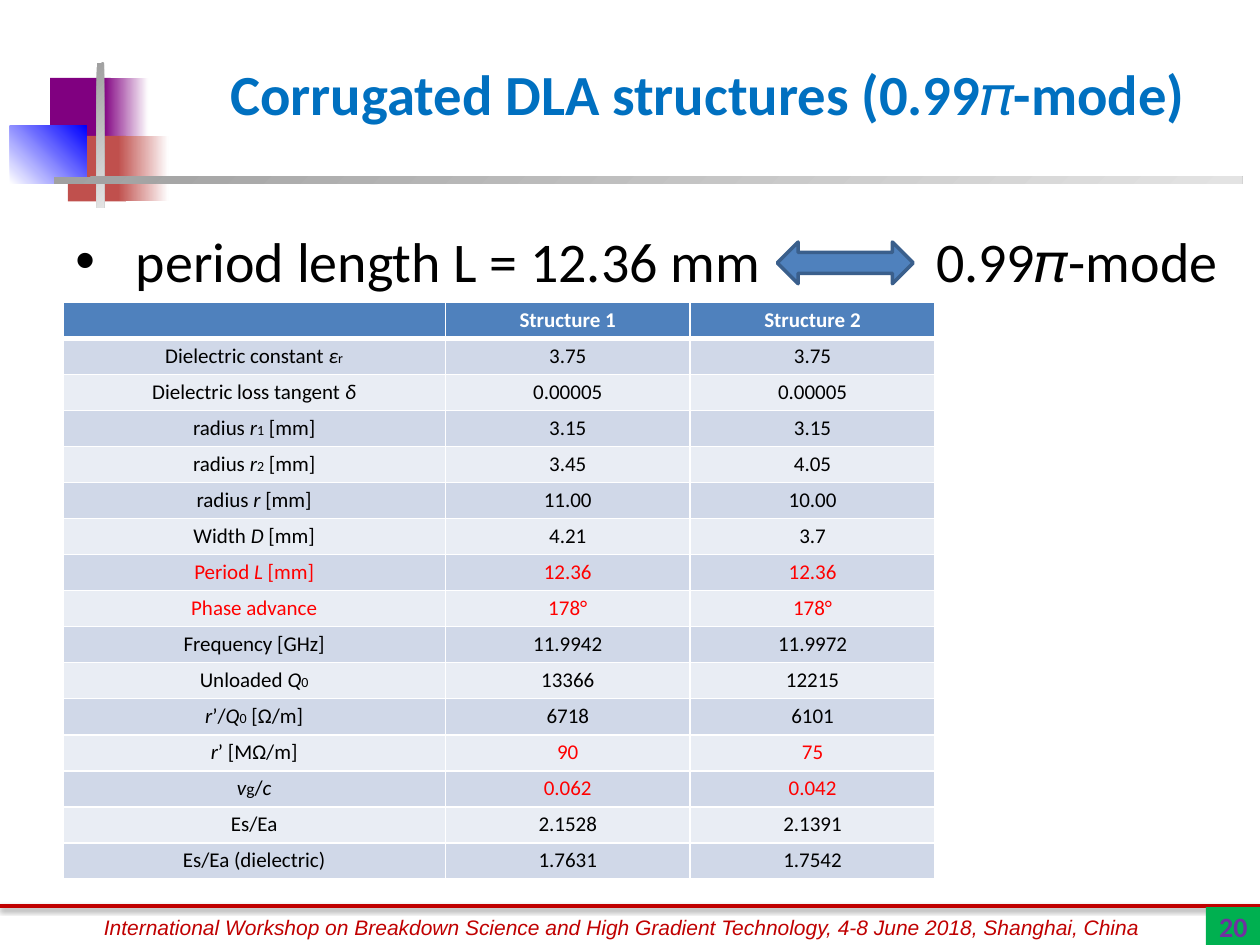
from lxml import etree
from pptx import Presentation
from pptx.dml.color import RGBColor
from pptx.enum.shapes import MSO_CONNECTOR, MSO_SHAPE
from pptx.enum.text import MSO_ANCHOR, PP_ALIGN
from pptx.oxml.ns import qn
from pptx.util import Cm, Pt

RECT, ARROW = MSO_SHAPE.RECTANGLE, MSO_SHAPE.LEFT_RIGHT_ARROW
LINE = MSO_CONNECTOR.STRAIGHT
LEFT, MID, RIGHT = PP_ALIGN.LEFT, PP_ALIGN.CENTER, PP_ALIGN.RIGHT
TOP, CENTER = MSO_ANCHOR.TOP, MSO_ANCHOR.MIDDLE

WHITE = RGBColor(0xFF, 0xFF, 0xFF)
BLACK = RGBColor(0, 0, 0)
PURPLE = RGBColor(0x80, 0, 0x80)
BRICK = RGBColor(0xC0, 0x50, 0x4D)
BLUE = RGBColor(0, 0, 0xFF)
GREY = RGBColor(0xA0, 0xA0, 0xA0)
PALE = RGBColor(0xE3, 0xE3, 0xE3)
CRIMSON = RGBColor(0xC0, 0, 0)
SKY = RGBColor(0, 0x70, 0xC0)
STEEL = RGBColor(0x4F, 0x81, 0xBD)
NAVY = RGBColor(0x3A, 0x5F, 0x8C)
GREEN = RGBColor(0, 0xB0, 0x50)
VIOLET = RGBColor(0x70, 0x30, 0xA0)
RED = RGBColor(0xFF, 0, 0)
BANDS = RGBColor(0xD0, 0xD8, 0xE8), RGBColor(0xE9, 0xED, 0xF4)

STYLES = {"~": (12, True), "_": (8, False), "^": (10, False)}
ROWS = [
    ("Dielectric constant |~ε|_r", "3.75", "3.75"),
    ("Dielectric loss tangent |~δ", "0.00005", "0.00005"),
    ("radius |~r|_1| [mm]", "3.15", "3.15"),
    ("radius |~r|_2| [mm]", "3.45", "4.05"),
    ("radius |~r| [mm]", "11.00", "10.00"),
    ("Width |~D |[mm]", "4.21", "3.7"),
    ("Period |~L| [mm]", "12.36", "12.36"),
    ("Phase advance", "178°", "178°"),
    ("Frequency [GHz]", "11.9942", "11.9972"),
    ("Unloaded |~Q|_0", "13366", "12215"),
    ("~r|’/|~Q|_0| [Ω/m]", "6718", "6101"),
    ("~r|’ [MΩ/m]", "90", "75"),
    ("~v|^g|/|~c", "0.062", "0.042"),
    ("Es/Ea", "2.1528", "2.1391"),
    ("Es/Ea (dielectric)", "1.7631", "1.7542"),
]
RED_ROWS = "Period |~L| [mm]", "Phase advance"
RED_DATA = RED_ROWS + ("~r|’ [MΩ/m]", "~v|^g|/|~c")


def style(run, size, color, bold=False, italic=False, face="Calibri"):
    font = run.font
    font.name, font.size, font.bold, font.italic = face, Pt(size), bold, italic
    font.color.rgb = color


def write(frame, text, size, color, align=LEFT, anchor=TOP, **looks):
    frame.word_wrap = True
    frame.vertical_anchor = anchor
    frame.text = text
    para = frame.paragraphs[0]
    para.alignment = align
    style(para.runs[0], size, color, **looks)


def add_text(slide, box, *args, **looks):
    frame = slide.shapes.add_textbox(*map(Cm, box)).text_frame
    write(frame, *args, **looks)
    return frame


def add_block(slide, box, color, end=None, angle=0, kind=RECT):
    shape = slide.shapes.add_shape(kind, *map(Cm, box))
    shape.shadow.inherit = False
    shape.line.fill.background()
    if end is None:
        shape.fill.solid()
        shape.fill.fore_color.rgb = color
    else:
        shape.fill.gradient()
        shape.fill.gradient_angle = angle
        for stop, tone in zip(shape.fill.gradient_stops, (color, end)):
            stop.color.rgb = tone
    return shape


def add_motif(slide, left, top):
    parts = [
        (0.81, 0.3, 1.22, 1.32, PURPLE),
        (1.88, 0.3, 0.91, 1.32, PURPLE, WHITE),
        (1.17, 1.47, 1.17, 1.32, BRICK),
        (2.18, 1.47, 1.02, 1.32, BRICK, WHITE),
        (0, 1.27, 1.55, 1.17, WHITE, BLUE, 45),
        (1.75, 0, 0.15, 2.92, GREY, PALE, 315),
        (0.89, 2.29, 23.95, 0.15, GREY, PALE, 315),
    ]
    for x, y, wide, high, *fill in parts:
        add_block(slide, (left + x, top + y, wide, high), *fill)


def add_footer(slide, left, top, width):
    rule = slide.shapes.add_connector(LINE, Cm(left), Cm(top), Cm(left + width), Cm(top))
    rule.line.color.rgb = CRIMSON
    rule.line.width = Pt(2)
    effects = etree.SubElement(rule._element.spPr, qn("a:effectLst"))
    shade = etree.SubElement(effects, qn("a:outerShdw"), blurRad=str(Pt(3.1)),
                             dist=str(Pt(1.6)), dir="5400000", rotWithShape="0")
    tone = etree.SubElement(shade, qn("a:srgbClr"), val="000000")
    etree.SubElement(tone, qn("a:alpha"), val="38000")
    add_text(slide, (left + 1.37, top + 0.05, 22.35, 0.76),
             "International Workshop on Breakdown Science and High Gradient Technology, "
             "4-8 June 2018, Shanghai, China",
             12, CRIMSON, MID, italic=True, face="Arial")
    badge = add_block(slide, (left + width - 1.09, top + 0.03, 1.09, 0.76), GREEN)
    write(badge.text_frame, "20", 16, VIOLET, RIGHT, CENTER, bold=True)
    badge.text_frame.word_wrap = False


def add_period(slide, left, top, height):
    frame = add_text(slide, (left, top, 14.4, height), "period length L = 12.36 mm", 32, BLACK)
    frame.margin_right = 0
    props = frame.paragraphs[0]._p.get_or_add_pPr()
    props.set("marL", str(Cm(1.22)))
    props.set("indent", str(-Cm(1.22)))
    etree.SubElement(props, qn("a:buFont"), typeface="Arial")
    etree.SubElement(props, qn("a:buChar"), char="•")
    arrow = add_block(slide, (left + 14.4, top + 0.43, 2.74, 0.84), STEEL, kind=ARROW)
    arrow.line.color.rgb = NAVY
    arrow.line.width = Pt(2)
    add_text(slide, (left + 17.35, top, 6.4, height), "0.99𝜋-mode", 32, BLACK)


def set_edges(cell, base):
    props = cell._tc.get_or_add_tcPr()
    for spot, side in enumerate("LRTB"):
        width = base if side == "B" else 1
        edge = etree.Element(qn(f"a:ln{side}"), w=str(Pt(width)))
        fill = etree.SubElement(edge, qn("a:solidFill"))
        etree.SubElement(fill, qn("a:srgbClr"), val=str(WHITE))
        props.insert(spot, edge)


def fill_cell(cell, text, color, fill, bold=False, base=1):
    cell.fill.solid()
    cell.fill.fore_color.rgb = fill
    cell.vertical_anchor = CENTER
    cell.margin_left = cell.margin_right = Cm(0.1)
    cell.margin_top = cell.margin_bottom = Cm(0.1)
    set_edges(cell, base)
    para = cell.text_frame.paragraphs[0]
    para.alignment = MID
    if not text:
        etree.SubElement(para._p, qn("a:endParaRPr"), sz="1200")
        return
    for part in text.split("|"):
        size, italic = STYLES.get(part[0], (12, False))
        run = para.add_run()
        run.text = part[1:] if part[0] in STYLES else part
        style(run, size, color, bold, italic)


def add_data(slide, left, top, width, height):
    count = len(ROWS) + 1
    frame = slide.shapes.add_table(count, 3, Cm(left), Cm(top), Cm(width), Cm(height))
    table = frame.table
    for col, wide in zip(table.columns, (3.03, 1.94, 1.94)):
        col.width = Cm(width * wide / 6.91)
    for row in table.rows:
        row.height = Cm(height / count)
    for col, text in enumerate(("", "Structure 1", "Structure 2")):
        fill_cell(table.cell(0, col), text, WHITE, STEEL, True, 3)
    for row, texts in enumerate(ROWS):
        for col, text in enumerate(texts):
            marked = RED_DATA if col else RED_ROWS
            color = RED if texts[0] in marked else BLACK
            fill_cell(table.cell(row + 1, col), text, color, BANDS[row % 2])


def main():
    deck = Presentation()
    deck.slide_width, deck.slide_height = Cm(25.4), Cm(19.05)
    slide = deck.slides.add_slide(deck.slide_layouts[6])
    add_motif(slide, 0.2, 1.27)
    add_text(slide, (4.01, 0.76, 20.52, 2.21), "Corrugated DLA structures (0.99𝜋-mode)",
             32.4, SKY, MID, CENTER, bold=True)
    add_period(slide, 1.27, 4.45, 1.5)
    add_data(slide, 1.27, 6.1, 17.58, 11.63)
    add_footer(slide, 0, 18.26, 25.4)
    deck.save("out.pptx")


if __name__ == "__main__":
    main()
